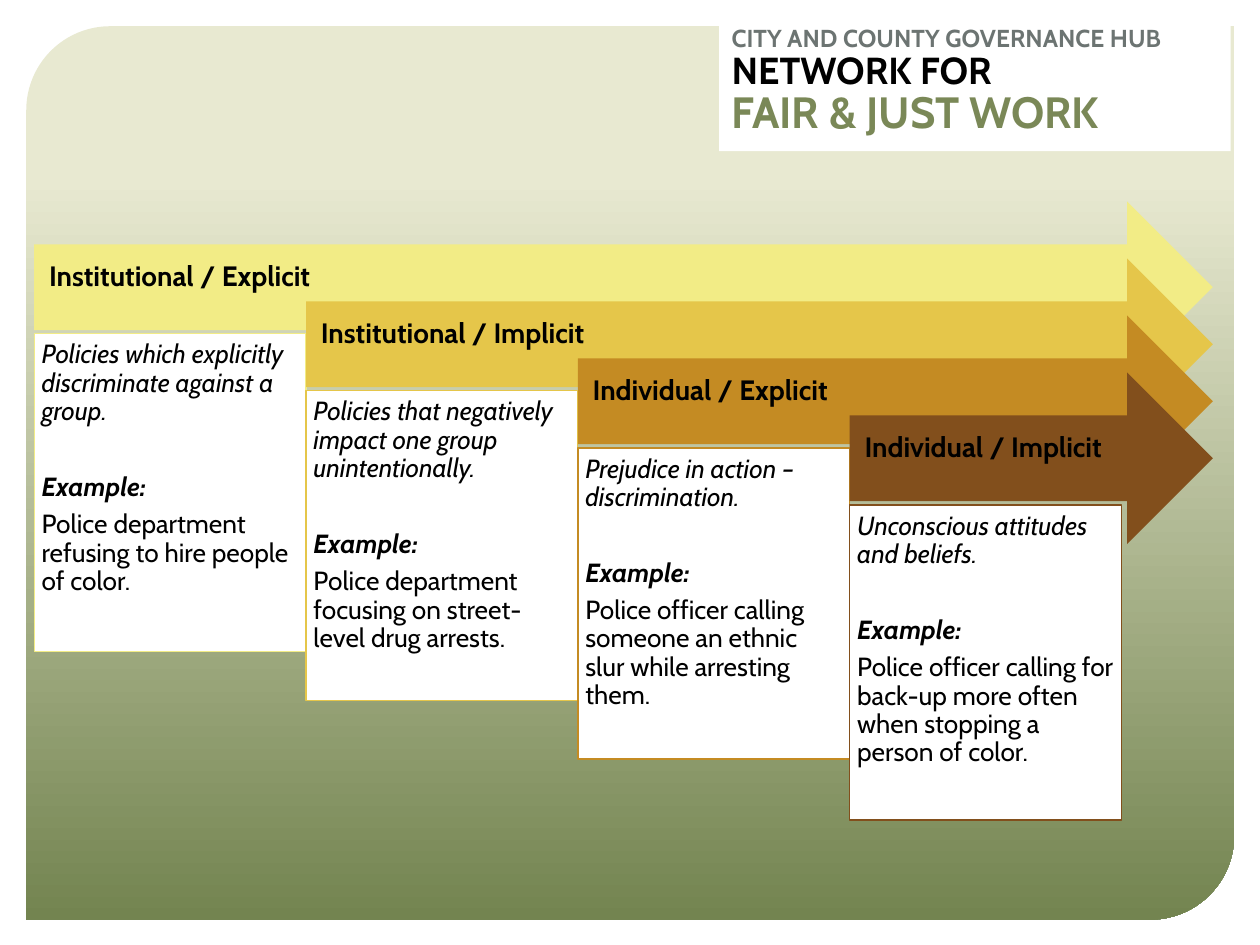
from pptx import Presentation
from pptx.dml.color import RGBColor
from pptx.enum.shapes import MSO_SHAPE
from pptx.enum.text import MSO_ANCHOR, PP_ALIGN
from pptx.util import Cm, Pt

BLACK = RGBColor(0x00, 0x00, 0x00)
WHITE = RGBColor(0xFF, 0xFF, 0xFF)
CREAM = RGBColor(0xE8, 0xE9, 0xD1)
OLIVE = RGBColor(0x73, 0x84, 0x50)
GREY = RGBColor(0x6C, 0x74, 0x72)
SAGE = RGBColor(0x7A, 0x88, 0x57)
YELLOW = RGBColor(0xF2, 0xEC, 0x86)
GOLD = RGBColor(0xE5, 0xC6, 0x4A)
AMBER = RGBColor(0xC4, 0x8B, 0x23)
BROWN = RGBColor(0x82, 0x4F, 0x1C)

# Heading, colour, panel height in cm, definition, example
BIAS_TYPES = [
    ("Institutional / Explicit", YELLOW, 6.4,
     "Policies which explicitly discriminate against a group.",
     "Police department refusing to hire people of color."),
    ("Institutional / Implicit", GOLD, 6.25,
     "Policies that negatively impact one group unintentionally.",
     "Police department focusing on street-level drug arrests."),
    ("Individual / Explicit", AMBER, 6.27,
     "Prejudice in action – discrimination.",
     "Police officer calling someone an ethnic slur while arresting them."),
    ("Individual / Implicit", BROWN, 6.35,
     "Unconscious attitudes and beliefs.",
     "Police officer calling for back-up more often when stopping a "
     "person of color."),
]

LEFT, TOP = 0.69, 4.06
COLUMN, STEP = 5.48, 1.15
ARROW_TIP, ARROW_HEIGHT = 24.45, 3.46
PANEL_DROP = 2.67


class SlideBuilder:
    font = "Cabin"

    def __init__(self, slide):
        self.slide = slide

    def shape(self, preset, left, top, width, height, fill=None, line=None):
        shape = self.slide.shapes.add_shape(
            preset, Cm(left), Cm(top), Cm(width), Cm(height))
        shape.shadow.inherit = False
        if fill is not None:
            shape.fill.solid()
            shape.fill.fore_color.rgb = fill
        if line is None:
            shape.line.fill.background()
        else:
            shape.line.color.rgb = line
            shape.line.width = Pt(0.75)
        return shape

    def frame(self, shape, insets, anchor=MSO_ANCHOR.TOP):
        """Prepare the text frame; insets are left, top, right, bottom in cm."""
        frame = shape.text_frame
        frame.word_wrap = True
        frame.vertical_anchor = anchor
        (frame.margin_left, frame.margin_top,
         frame.margin_right, frame.margin_bottom) = map(Cm, insets)
        return frame

    def paragraph(self, frame, text, size, color=BLACK, bold=False,
                  italic=False, spacing=0.9, before=0, after=0):
        first = frame.paragraphs[0]
        paragraph = frame.add_paragraph() if first.runs else first
        paragraph.alignment = PP_ALIGN.LEFT
        paragraph.line_spacing = spacing
        paragraph.space_before = Pt(before)
        paragraph.space_after = Pt(after)
        run = paragraph.add_run()
        run.text = text
        run.font.name = self.font
        run.font.size = Pt(size)
        run.font.bold = bold
        run.font.italic = italic
        run.font.color.rgb = color

    def backdrop(self):
        backdrop = self.shape(MSO_SHAPE.ROUND_2_DIAG_RECTANGLE,
                              0.53, 0.53, 24.35, 18.01)
        backdrop.adjustments[0] = 0.094
        backdrop.adjustments[1] = 0
        backdrop.fill.gradient()
        backdrop.fill.gradient_angle = 270
        stops = backdrop.fill.gradient_stops
        for stop, color, position in zip(stops, (CREAM, OLIVE), (0.17, 1)):
            stop.color.rgb = color
            stop.position = position

    def arrow(self, left, top, color, heading):
        arrow = self.shape(MSO_SHAPE.RIGHT_ARROW, left, top,
                           ARROW_TIP - left, ARROW_HEIGHT, color)
        frame = self.frame(arrow, (0.3, 0.18, 0.7, 0.56), MSO_ANCHOR.MIDDLE)
        self.paragraph(frame, heading, 16, bold=True, after=5.6)

    def panel(self, left, top, height, color, definition, example):
        panel = self.shape(MSO_SHAPE.RECTANGLE, left, top, COLUMN, height,
                           WHITE, color)
        frame = self.frame(panel, (0.15, 0.15, 0.15, 0.15))
        self.paragraph(frame, definition, 15, italic=True, after=27)
        self.paragraph(frame, "Example:", 15, bold=True, italic=True,
                       after=5.25)
        self.paragraph(frame, example, 15, after=5.25)

    def name_block(self, lines):
        block = self.shape(MSO_SHAPE.RECTANGLE, 14.5, 0.48, 10.31, 2.57, WHITE)
        frame = self.frame(block, (0.25, 0.13, 0.25, 0.13))
        for text, size, color in lines:
            self.paragraph(frame, text, size, color, bold=True,
                           spacing=0.75, before=3)


def main():
    presentation = Presentation()
    presentation.slide_width = Cm(25.4)
    presentation.slide_height = Cm(19.05)
    builder = SlideBuilder(
        presentation.slides.add_slide(presentation.slide_layouts[6]))

    builder.backdrop()
    for index, (heading, color, height, definition, example) in enumerate(
            BIAS_TYPES):
        left, top = LEFT + index * COLUMN, TOP + index * STEP
        builder.arrow(left, top, color, heading)
        builder.panel(left, top + PANEL_DROP, height, color,
                      definition, example)
    builder.name_block([
        ("CITY AND COUNTY GOVERNANCE HUB", 14, GREY),
        ("NETWORK FOR", 21.5, BLACK),
        ("FAIR & JUST WORK", 25, SAGE),
    ])
    presentation.save("out.pptx")


if __name__ == "__main__":
    main()
